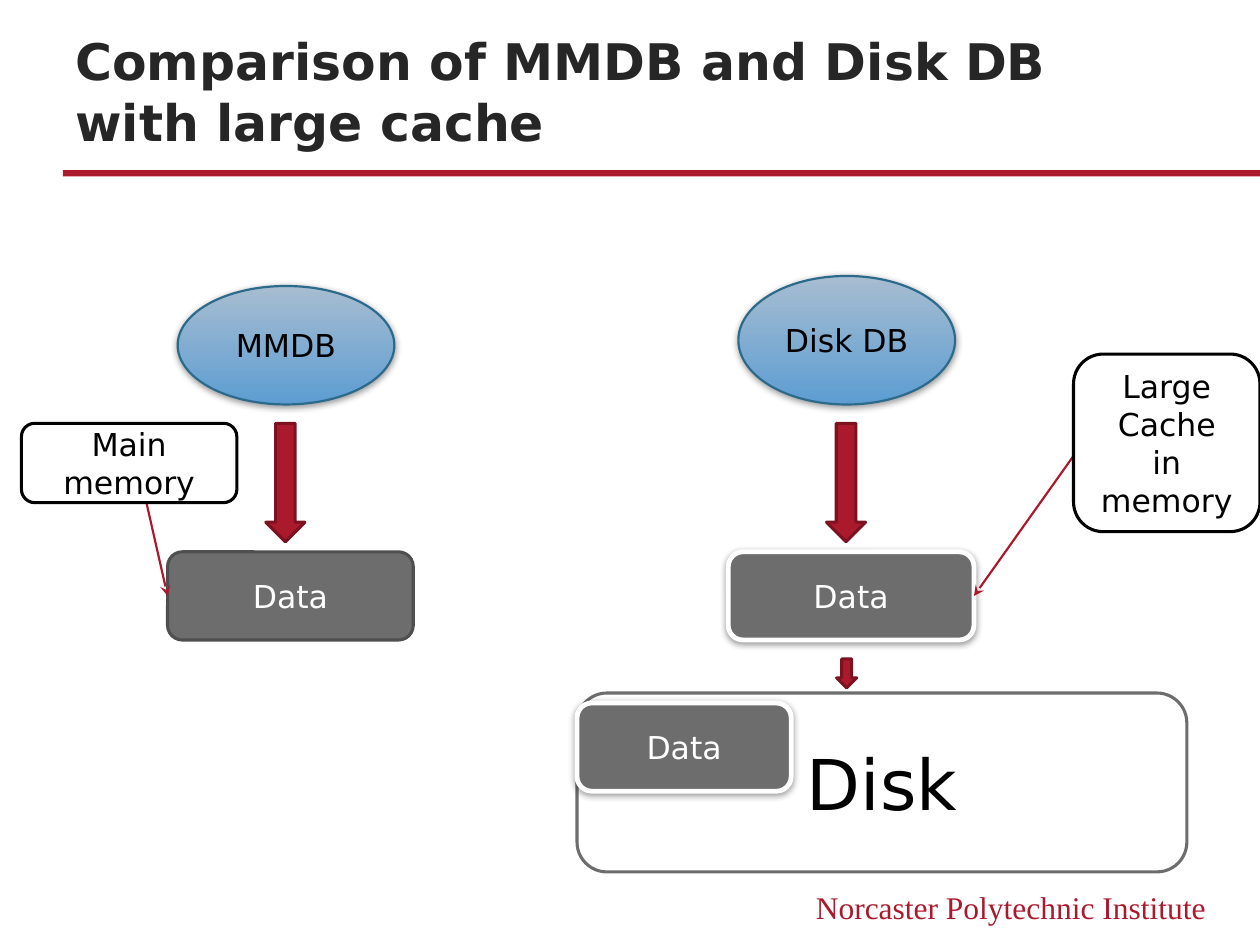
import pptx
import pptx.util
import pptx.oxml.ns
from lxml import etree
from pptx.dml.color import RGBColor
from pptx.enum.shapes import MSO_CONNECTOR, MSO_SHAPE
from pptx.enum.text import MSO_ANCHOR, PP_ALIGN
from pptx.util import Inches

RED = RGBColor(0xAB, 0x19, 0x2D)
WINE = RGBColor(0x7C, 0x12, 0x20)
GRAY = RGBColor(0x6D, 0x6D, 0x6D)
DARK = RGBColor(0x4F, 0x4F, 0x4F)
INK = RGBColor(0x26, 0x26, 0x26)
BLACK = RGBColor(0, 0, 0)
WHITE = RGBColor(0xFF, 0xFF, 0xFF)
SKY = RGBColor(0xA7, 0xBD, 0xD1)
BLUE = RGBColor(0x5D, 0x9D, 0xD2)
TEAL = RGBColor(0x2C, 0x6A, 0x8C)


def add_node(parent, tag, **attrs):
    return etree.SubElement(parent, pptx.oxml.ns.qn(tag), attrs)


def write(frame, text, size=18, color=BLACK, font="DejaVu Sans", bold=False,
          align=PP_ALIGN.CENTER, anchor=MSO_ANCHOR.MIDDLE):
    frame.word_wrap = True
    frame.vertical_anchor = anchor
    frame.text = text
    for para in frame.paragraphs:
        para.alignment = align
        para.font.size = pptx.util.Pt(size)
        para.font.name = font
        para.font.bold = bold
        para.font.color.rgb = color


class Deck:
    round = 0.167
    thin = 1.25
    mid = 1.75
    thick = 2.75

    def __init__(self, slide):
        self.slide = slide

    def label(self, box, text, **style):
        item = self.slide.shapes.add_textbox(*map(Inches, box))
        write(item.text_frame, text, **style)

    def shape(self, kind, box, fill, line=None, width=mid, shade=False):
        item = self.slide.shapes.add_shape(kind, *map(Inches, box))
        item.shadow.inherit = False
        item.fill.solid()
        item.fill.fore_color.rgb = fill
        if line is None:
            item.line.fill.background()
        else:
            item.line.color.rgb = line
            item.line.width = pptx.util.Pt(width)
        if shade:
            self.shade(item)
        return item

    def shade(self, item):
        effects = item.element.spPr.find(pptx.oxml.ns.qn("a:effectLst"))
        outer = add_node(effects, "a:outerShdw", blurRad="50800", dist="12700",
                         dir="5280000", rotWithShape="0")
        color = add_node(outer, "a:srgbClr", val="000000")
        add_node(color, "a:alpha", val="40000")

    def oval(self, box, text):
        item = self.shape(MSO_SHAPE.OVAL, box, SKY, TEAL, self.thin, True)
        item.fill.gradient()
        item.fill.gradient_angle = 270
        for stop, color in zip(item.fill.gradient_stops, (SKY, BLUE)):
            stop.color.rgb = color
        write(item.text_frame, text)

    def panel(self, box, text, line, fill=WHITE, width=mid, shade=False, **style):
        item = self.shape(MSO_SHAPE.ROUNDED_RECTANGLE, box, fill, line, width, shade)
        item.adjustments[0] = self.round
        write(item.text_frame, text, **style)

    def data(self, box, cached=True):
        line, width = (WHITE, self.thick) if cached else (DARK, self.mid)
        self.panel(box, "Data", line, GRAY, width, cached, color=WHITE)

    def arrow(self, box):
        self.shape(MSO_SHAPE.DOWN_ARROW, box, RED, WINE)

    def pointer(self, start, end):
        item = self.slide.shapes.add_connector(
            MSO_CONNECTOR.STRAIGHT, *map(Inches, start + end))
        item.line.color.rgb = RED
        item.line.width = pptx.util.Pt(self.thin)
        add_node(item.line._get_or_add_ln(), "a:tailEnd", type="stealth")
        add_node(item.element.spPr, "a:effectLst")


def main():
    show = pptx.Presentation()
    show.slide_width, show.slide_height = Inches(10), Inches(7.5)
    deck = Deck(show.slides.add_slide(show.slide_layouts[6]))

    # Frame: rule, footer and title
    deck.shape(MSO_SHAPE.RECTANGLE, (0.5, 1.35, 9.5, 0.05), RED)
    deck.label((6, 7, 3.67, 0.4), "Norcaster Polytechnic Institute", color=RED,
               font="Times New Roman", align=PP_ALIGN.RIGHT, anchor=MSO_ANCHOR.TOP)
    deck.label((0.5, 0.38, 9, 0.87), "Comparison of MMDB and Disk DB with large cache",
               size=28.8, color=INK, bold=True, align=PP_ALIGN.LEFT,
               anchor=MSO_ANCHOR.BOTTOM)

    # Both databases: oval, arrow and data, centred on one axis each
    for mid, name, top, cached in ((2.27, "MMDB", 2.27, False),
                                   (6.72, "Disk DB", 2.19, True)):
        deck.oval((mid - 0.86, top, 1.72, 3.21 - top), name)
        deck.arrow((mid - 0.16, 3.36, 0.31, 0.94))
        deck.data((mid - 0.94, 4.38, 1.95, 0.7), cached)

    # Disk with its stored data
    deck.panel((4.58, 5.5, 4.84, 1.42), "Disk", GRAY, size=40)
    deck.arrow((6.64, 5.23, 0.16, 0.23))
    deck.data((4.58, 5.58, 1.7, 0.7))

    # Callouts for memory
    deck.pointer((8.59, 3.52), (7.73, 4.73))
    deck.panel((8.52, 2.81, 1.48, 1.41), "Large Cache\nin memory", BLACK)
    deck.pointer((1.02, 3.36), (1.33, 4.73))
    deck.panel((0.17, 3.36, 1.71, 0.63), "Main memory", BLACK)

    show.save("out.pptx")


if __name__ == "__main__":
    main()
